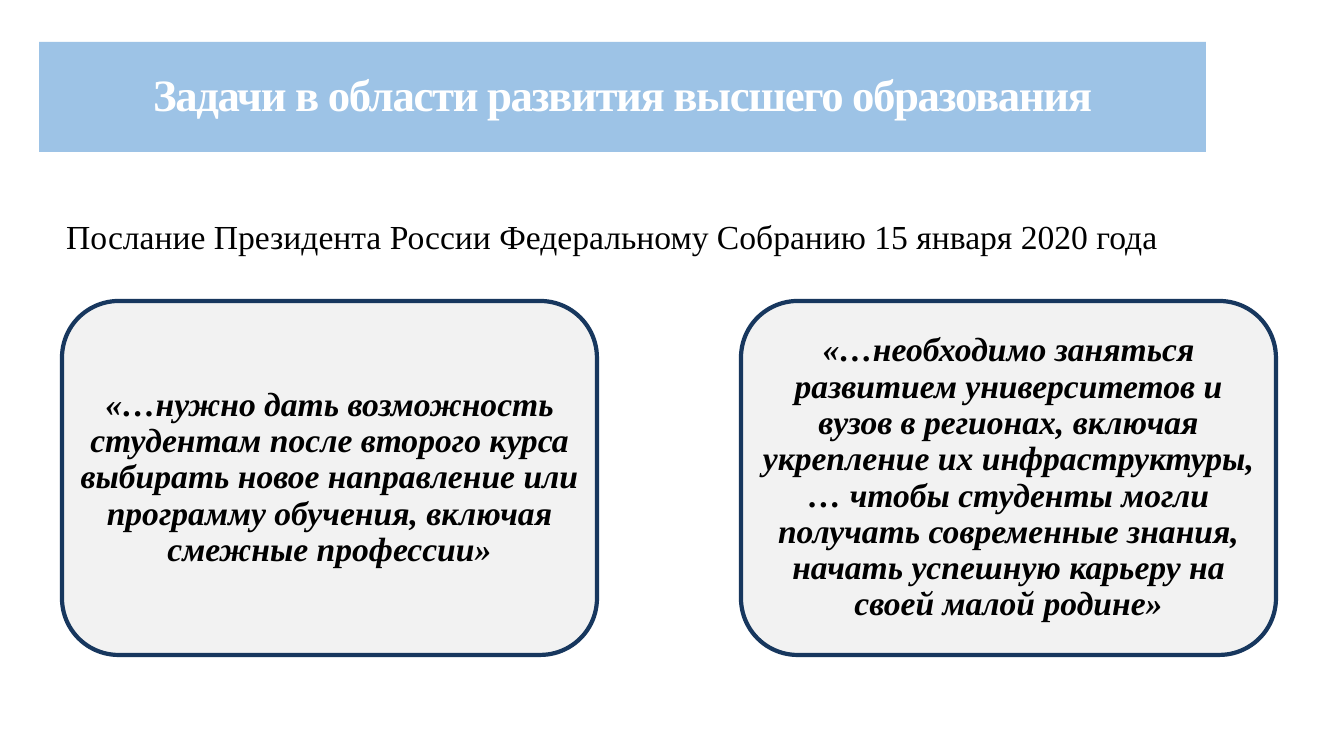
"""Builds a slide on higher education goals: a title band, a subtitle and two quote cards."""
from pptx import Presentation
from pptx.dml.color import RGBColor
from pptx.enum.shapes import MSO_SHAPE as Shape
from pptx.enum.text import MSO_ANCHOR as Anchor, PP_ALIGN as Align
from pptx.util import Emu, Pt

TITLE = "Задачи в области развития высшего образования"
SUBTITLE = "Послание Президента России Федеральному Собранию 15 января 2020 года"
QUOTES = [
    "«…нужно дать возможность студентам после второго курса выбирать "
    "новое направление или программу обучения, включая смежные профессии»",
    "«…необходимо заняться развитием университетов и вузов в регионах, "
    "включая укрепление их инфраструктуры, … чтобы студенты могли получать "
    "современные знания, начать успешную карьеру на своей малой родине»",
]

FONT = "Times New Roman"
WHITE = RGBColor(0xFF, 0xFF, 0xFF)
BLACK = RGBColor(0x00, 0x00, 0x00)
SKY = RGBColor(0x9D, 0xC3, 0xE6)
PALE = RGBColor(0xF2, 0xF2, 0xF2)
NAVY = RGBColor(0x17, 0x37, 0x5E)

SLIDE_WIDTH, SLIDE_HEIGHT = 1344, 756
TITLE_BAND = (39, 42, 1167, 110)
SUBTITLE_BOX = (52, 206, 1120, 65)
CARD_LEFT, CARD_TOP, CARD_WIDTH, CARD_HEIGHT = 62, 301, 535, 354
CARD_STEP = 679
CARD_RADIUS = 56
CARD_INSET = 1


def px(length):
    """Turn pixels into EMU."""
    return Emu(round(length * 914400 / 100.8))


def write(box, text, size, color, bold=False, italic=False):
    """Put one centred paragraph into a box and return its run."""
    frame = box.text_frame
    frame.word_wrap = True
    frame.vertical_anchor = Anchor.MIDDLE
    para = frame.paragraphs[0]
    para.alignment = Align.CENTER
    para.line_spacing = 0.9
    span = para.add_run()
    span.text = text
    font = span.font
    font.name, font.size, font.bold, font.italic = FONT, Pt(size), bold, italic
    font.color.rgb = color
    return span


def add_panel(page, kind, place, fill):
    """Add a filled shape without shadow or outline."""
    panel = page.shapes.add_shape(kind, *map(px, place))
    panel.shadow.inherit = False
    panel.fill.solid()
    panel.fill.fore_color.rgb = fill
    panel.line.fill.background()
    return panel


def add_card(page, index, quote):
    """Add one outlined quote card."""
    place = (CARD_LEFT + index * CARD_STEP, CARD_TOP, CARD_WIDTH, CARD_HEIGHT)
    card = add_panel(page, Shape.ROUNDED_RECTANGLE, place, PALE)
    card.adjustments[0] = round(CARD_RADIUS / CARD_HEIGHT, 2)
    card.line.color.rgb = NAVY
    card.line.width = Pt(3)
    frame = card.text_frame
    frame.margin_left = frame.margin_right = px(CARD_INSET)
    frame.margin_top = frame.margin_bottom = px(CARD_INSET)
    write(card, quote, 24, BLACK, bold=True, italic=True)


def main():
    """Build and save the deck."""
    deck = Presentation()
    deck.slide_width, deck.slide_height = px(SLIDE_WIDTH), px(SLIDE_HEIGHT)
    page = deck.slides.add_slide(deck.slide_layouts[6])

    band = add_panel(page, Shape.RECTANGLE, TITLE_BAND, SKY)
    title = write(band, TITLE, 32, WHITE, bold=True)
    title.font._element.set("spc", "-100")

    subtitle = page.shapes.add_textbox(*map(px, SUBTITLE_BOX))
    write(subtitle, SUBTITLE, 24, BLACK)

    for index, quote in enumerate(QUOTES):
        add_card(page, index, quote)
    deck.save("out.pptx")


if __name__ == "__main__":
    main()
